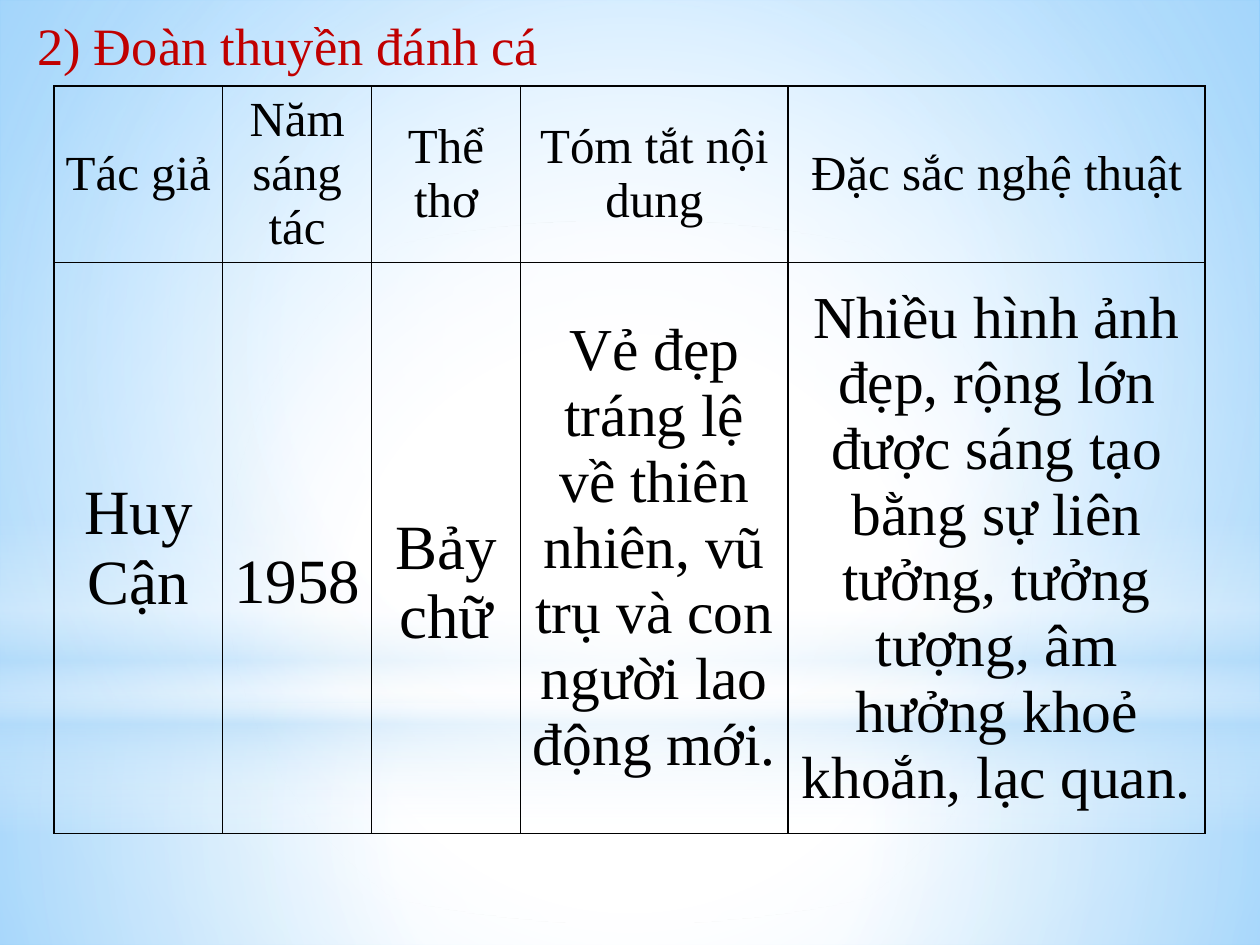
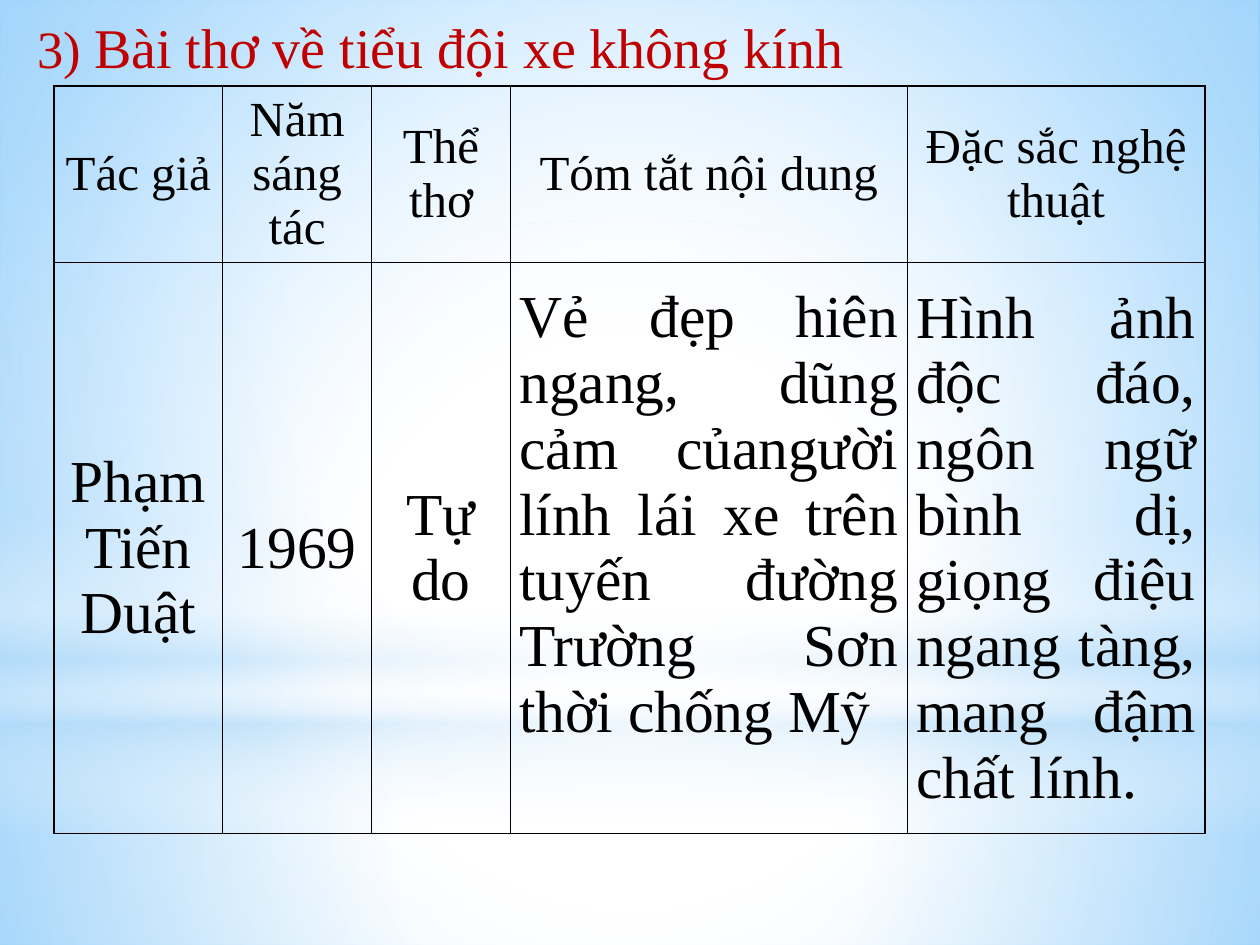
from dataclasses import dataclass

from lxml import etree
from pptx import Presentation
from pptx.dml.color import RGBColor
from pptx.enum import shapes, text
from pptx.oxml.ns import qn
from pptx.util import Cm, Pt


@dataclass(frozen=True)
class Theme:
    font: str = "Times New Roman"
    title: str = "C00000"
    ink: str = "000000"
    white: str = "FFFFFF"
    pale: str = "B4DCFA"
    sky: str = "63BCFF"
    title_size: int = 30
    large_title_size: int = 32
    header_size: int = 28
    body_size: int = 34
    large_body_size: int = 36
    border_width: int = 1


THEME = Theme()
SLIDE_WIDTH, SLIDE_HEIGHT = 25.4, 19.05
ROW_HEIGHTS = (3.56, 11.51)
CELL_MARGIN = 0.18
HEADERS = ("Tác giả", "Năm sáng tác", "Thể thơ", "Tóm tắt nội dung", "Đặc sắc nghệ thuật")
CENTER, JUSTIFY = text.PP_ALIGN.CENTER, text.PP_ALIGN.JUSTIFY


@dataclass(frozen=True)
class Entry:
    """Body cell; the gaps in cm push the text off the middle of the cell."""
    words: str
    size: int = THEME.body_size
    alignment: text.PP_ALIGN = CENTER
    gap_above: float = 0
    gap_below: float = 0


# Shared background

def add_child(parent, tag, **attributes):
    child = etree.SubElement(parent, qn(tag))
    for name, value in attributes.items():
        child.set(name, str(value))
    return child


def apply_gradient(fill, properties, stops, focus=None):
    """Stops are (position, colour, opacity); without a focus the fill runs downwards."""
    fill.solid()
    solid = properties.find(qn("a:solidFill"))
    gradient = etree.Element(qn("a:gradFill"), rotWithShape="1")
    stop_list = add_child(gradient, "a:gsLst")
    for position, colour, opacity in stops:
        stop = add_child(stop_list, "a:gs", pos=position * 1000)
        add_child(add_child(stop, "a:srgbClr", val=colour), "a:alpha", val=opacity * 1000)
    if focus:
        circle = add_child(gradient, "a:path", path="circle")
        sides = {side: value * 1000 for side, value in zip("ltrb", focus)}
        add_child(circle, "a:fillToRect", **sides)
    else:
        add_child(gradient, "a:lin", ang=90 * 60000, scaled=0)
    properties.replace(solid, gradient)


def add_glow(slide, kind, top, height, stops, focus=None):
    shape = slide.shapes.add_shape(kind, 0, Cm(top), Cm(SLIDE_WIDTH), Cm(height))
    shape.shadow.inherit = False
    shape.line.fill.background()
    apply_gradient(shape.fill, shape._element.spPr, stops, focus)
    return shape


def build_background(master, slide):
    """Draw the glows on a slide, then move them to the master for all slides."""
    white, pale = THEME.white, THEME.pale
    rectangle, oval = shapes.MSO_SHAPE.RECTANGLE, shapes.MSO_SHAPE.OVAL
    middle = (50, 50, 50, 50)
    horizon = 14.17

    apply_gradient(master.background.fill, master.element.cSld.bg.bgPr,
                   [(0, white, 100), (36, white, 100), (100, THEME.sky, 100)],
                   (24, 44, 24, 12))
    glows = [
        add_glow(slide, rectangle, horizon, SLIDE_HEIGHT - horizon,
                 [(0, white, 91), (37, white, 76), (100, pale, 79)], middle),
        add_glow(slide, rectangle, 0, horizon,
                 [(0, white, 89), (48, white, 62), (100, pale, 79)], middle),
        add_glow(slide, rectangle, 10.46, 6.35,
                 [(0, white, 0), (29, white, 30), (45, pale, 40),
                  (55, white, 26), (65, pale, 60), (100, white, 0)]),
        add_glow(slide, oval, 4.45, horizon,
                 [(0, white, 100), (56, white, 0)], middle),
    ]
    for number, glow in enumerate(glows, start=101):
        glow._element.nvSpPr.cNvPr.set("id", str(number))
        master.shapes._spTree.append(glow._element)


# Title and table

def style_font(font, size, colour):
    font.name = THEME.font
    font.size = Pt(size)
    font.color.rgb = RGBColor.from_string(colour)


def add_title(slide, parts):
    box = slide.shapes.add_textbox(Cm(0.5), Cm(0.13), Cm(17), Cm(1.6))
    box.text_frame.word_wrap = False
    paragraph = box.text_frame.paragraphs[0]
    paragraph.alignment = text.PP_ALIGN.LEFT
    for words, size in parts:
        run = paragraph.add_run()
        run.text = words
        style_font(run.font, size, THEME.title)


def add_borders(cell):
    properties = cell._tc.get_or_add_tcPr()
    for side in ("a:lnL", "a:lnR", "a:lnT", "a:lnB"):
        line = add_child(properties, side, w=Pt(THEME.border_width))
        add_child(add_child(line, "a:solidFill"), "a:srgbClr", val=THEME.ink)


def fill_cell(cell, entry):
    add_borders(cell)
    cell.fill.background()
    cell.vertical_anchor = text.MSO_ANCHOR.MIDDLE
    cell.margin_left = cell.margin_right = Cm(CELL_MARGIN)
    cell.margin_top, cell.margin_bottom = Cm(entry.gap_above), Cm(entry.gap_below)
    cell.text = entry.words
    paragraph = cell.text_frame.paragraphs[0]
    paragraph.alignment = entry.alignment
    style_font(paragraph.font, entry.size, THEME.ink)


def add_poem_table(slide, column_widths, entries):
    frame = slide.shapes.add_table(2, len(HEADERS), Cm(1.09), Cm(1.73),
                                   Cm(sum(column_widths)), Cm(sum(ROW_HEIGHTS)))
    table = frame.table
    table.first_row = table.horz_banding = False
    for column, width in zip(table.columns, column_widths):
        column.width = Cm(width)
    for row, height in zip(table.rows, ROW_HEIGHTS):
        row.height = Cm(height)
    headers = [Entry(words, THEME.header_size) for words in HEADERS]
    for row, row_entries in zip(table.rows, (headers, entries)):
        for cell, entry in zip(row.cells, row_entries):
            fill_cell(cell, entry)


def main():
    presentation = Presentation()
    presentation.slide_width = Cm(SLIDE_WIDTH)
    presentation.slide_height = Cm(SLIDE_HEIGHT)
    blank = presentation.slide_layouts[6]
    large = THEME.large_body_size

    # Fishing fleet poem
    fleet = presentation.slides.add_slide(blank)
    build_background(presentation.slide_master, fleet)
    add_title(fleet, [("2) Đoàn thuyền đánh cá", THEME.title_size)])
    add_poem_table(fleet, (3.4, 3, 3, 5.4, 8.4), [
        Entry("Huy Cận", large),
        Entry("1958", large, gap_above=1.4),
        Entry("Bảy chữ", large, gap_above=1.4),
        Entry("Vẻ đẹp tráng lệ về thiên nhiên, vũ trụ và con người lao động mới."),
        Entry("Nhiều hình ảnh đẹp, rộng lớn được sáng tạo bằng sự liên tưởng, "
              "tưởng tượng, âm hưởng khoẻ khoắn, lạc quan."),
    ])

    # Truck squad poem
    trucks = presentation.slides.add_slide(blank)
    add_title(trucks, [("3) ", THEME.title_size),
                       ("Bài thơ về tiểu đội xe không kính", THEME.large_title_size)])
    add_poem_table(trucks, (3.4, 3, 2.8, 8, 6), [
        Entry("Phạm Tiến Duật"),
        Entry("1969"),
        Entry("Tự do"),
        Entry("Vẻ đẹp hiên ngang, dũng cảm củangười lính lái xe trên tuyến đường "
              "Trường Sơn thời chống Mỹ", alignment=JUSTIFY, gap_below=1.33),
        Entry("Hình ảnh độc đáo, ngôn ngữ bình dị, giọng điệu ngang tàng, "
              "mang đậm chất lính.", alignment=JUSTIFY),
    ])

    presentation.save("out.pptx")


if __name__ == "__main__":
    main()
